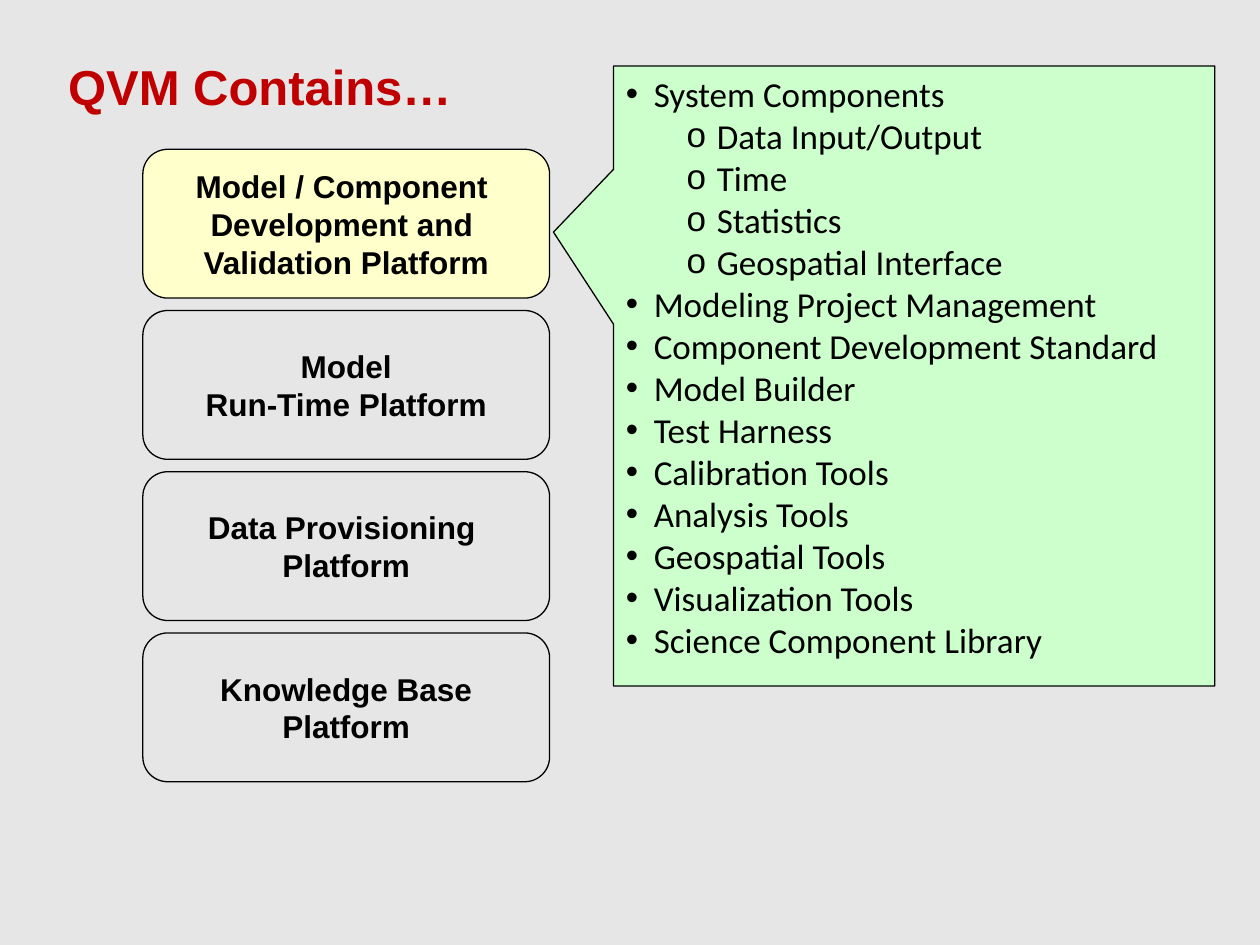
import pptx
import pptx.util
import pptx.dml.color
import pptx.enum.shapes
import pptx.enum.text
import pptx.oxml.ns
from lxml import etree

Cm, Pt = pptx.util.Cm, pptx.util.Pt
SHAPE = pptx.enum.shapes.MSO_SHAPE
ALIGN = pptx.enum.text.PP_ALIGN
ANCHOR = pptx.enum.text.MSO_ANCHOR

TITLE = "QVM Contains…"
PLATFORMS = [
    ("yellow", ["Model / Component ", "Development and ", "Validation Platform"]),
    ("grey", ["Model", "Run-Time Platform"]),
    ("grey", ["Data Provisioning ", "Platform"]),
    ("grey", ["Knowledge Base", "Platform"]),
]
CONTENTS = [
    ("System Components", ["Data Input/Output", "Time", "Statistics", "Geospatial Interface"]),
    ("Modeling Project Management", []),
    ("Component Development Standard", []),
    ("Model Builder", []),
    ("Test Harness", []),
    ("Calibration Tools", []),
    ("Analysis Tools", []),
    ("Geospatial Tools", []),
    ("Visualization Tools", []),
    ("Science Component Library", []),
]
COLORS = {"grey": "E6E6E6", "yellow": "FFFFCC", "green": "CCFFCC", "red": "C00000", "black": "000000"}
BULLETS = [("•", 0.56), ("o", 1.83)]
HANGING = -0.61
BOX_LEFT, BOX_TOP, BOX_WIDTH, BOX_HEIGHT, BOX_STEP = 2.88, 3.01, 8.2, 3.0, 3.25


def rgb(name):
    """Return the named colour."""
    return pptx.dml.color.RGBColor.from_string(COLORS[name])


def write(tf, text, first=False, font="Arial", size=18, color="black", bold=False, align=ALIGN.LEFT, level=None):
    """Write one paragraph, bulleted when a level is given."""
    p = tf.paragraphs[0] if first else tf.add_paragraph()
    p.alignment = align
    r = p.add_run()
    r.text = text
    r.font.name, r.font.size, r.font.bold = font, Pt(size), bold
    r.font.color.rgb = rgb(color)
    if level is not None:
        mark, margin = BULLETS[level]
        p.level = level
        pPr = p._p.get_or_add_pPr()
        pPr.set("marL", str(Cm(margin)))
        pPr.set("indent", str(Cm(HANGING)))
        etree.SubElement(pPr, pptx.oxml.ns.qn("a:buFont")).set("typeface", "Arial")
        etree.SubElement(pPr, pptx.oxml.ns.qn("a:buChar")).set("char", mark)


def add_panel(s, kind, box, fill, adjustments, anchor, wrap):
    """Add an outlined shape and return its text frame."""
    sp = s.shapes.add_shape(kind, *map(Cm, box))
    sp.shadow.inherit = False
    sp.fill.solid()
    sp.fill.fore_color.rgb = rgb(fill)
    sp.line.color.rgb = rgb("black")
    sp.line.width = Pt(0.75)
    for i, value in enumerate(adjustments):
        sp.adjustments[i] = value
    tf = sp.text_frame
    tf.vertical_anchor, tf.word_wrap = anchor, wrap
    return tf


def main():
    """Build the slide and save it."""
    prs = pptx.Presentation()
    prs.slide_width, prs.slide_height = Cm(25.4), Cm(19.05)
    s = prs.slides.add_slide(prs.slide_layouts[5])
    s.background.fill.solid()
    s.background.fill.fore_color.rgb = rgb("grey")

    title = s.shapes.title
    title.left, title.top, title.width, title.height = map(Cm, (1.12, 1.02, 10.24, 1.45))
    tf = title.text_frame
    tf.vertical_anchor, tf.word_wrap = ANCHOR.TOP, True
    tf.auto_size = pptx.enum.text.MSO_AUTO_SIZE.NONE
    write(tf, TITLE, first=True, size=28, color="red", bold=True)

    for row, (fill, lines) in enumerate(PLATFORMS):
        box = (BOX_LEFT, BOX_TOP + row * BOX_STEP, BOX_WIDTH, BOX_HEIGHT)
        tf = add_panel(s, SHAPE.ROUNDED_RECTANGLE, box, fill, [0.167], ANCHOR.MIDDLE, False)
        for i, line in enumerate(lines):
            write(tf, line, first=i == 0, bold=True, align=ALIGN.CENTER)

    tf = add_panel(s, SHAPE.RECTANGULAR_CALLOUT, (12.37, 1.33, 12.12, 12.5), "green",
                   [-0.6, -0.232], ANCHOR.TOP, True)
    for i, (item, details) in enumerate(CONTENTS):
        write(tf, item, first=i == 0, font="Calibri", size=20, level=0)
        for detail in details:
            write(tf, detail, font="Calibri", size=20, level=1)

    prs.save("out.pptx")


if __name__ == "__main__":
    main()
